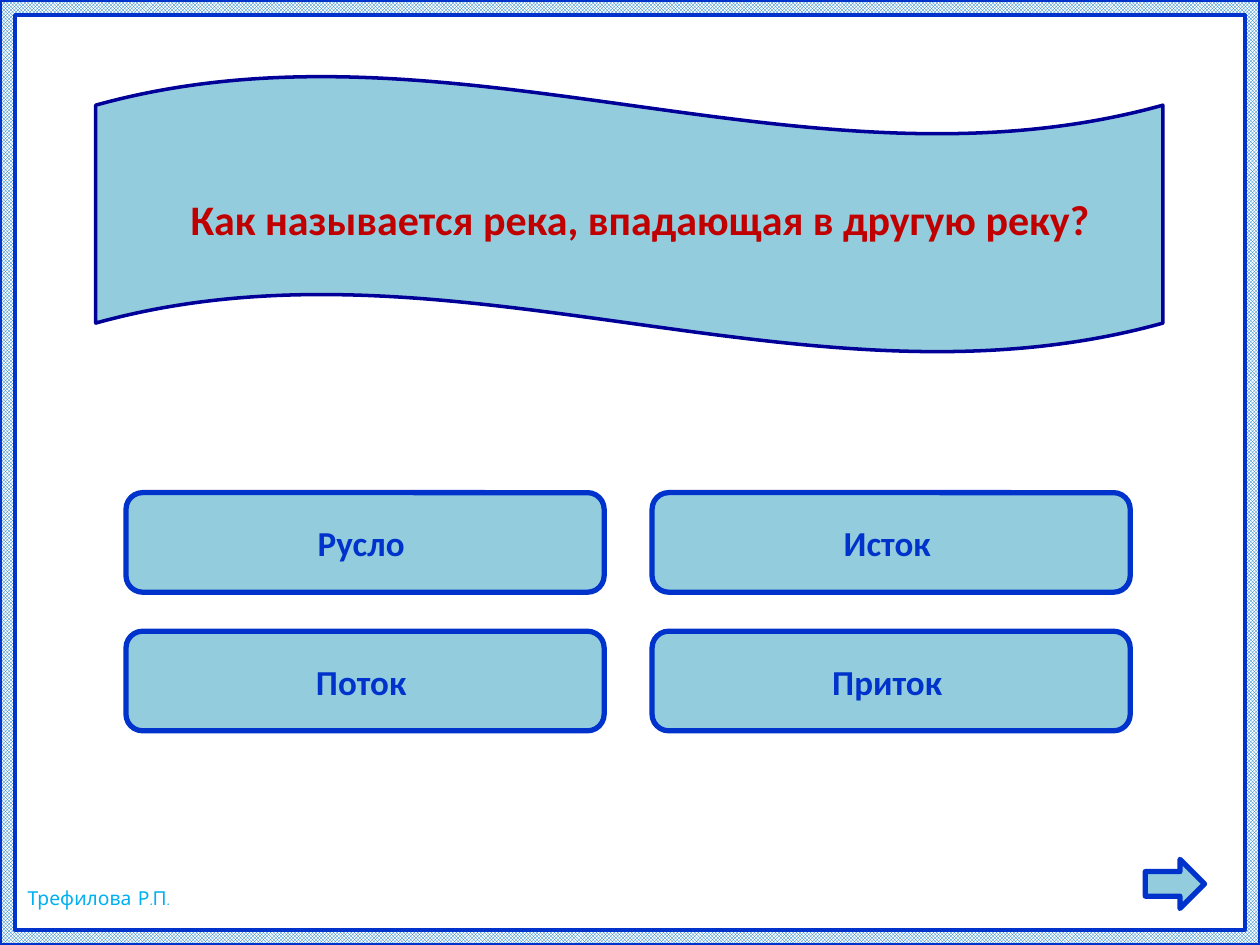
from pptx import Presentation
from pptx.dml.color import RGBColor
from pptx.enum.dml import MSO_PATTERN
from pptx.enum.shapes import MSO_SHAPE
from pptx.enum.text import MSO_ANCHOR, PP_ALIGN
from pptx.util import Inches, Pt

WHITE = RGBColor(0xFF, 0xFF, 0xFF)
CHECK_BLUE = RGBColor(0x00, 0x70, 0xC0)
BLUE = RGBColor(0x00, 0x33, 0xCC)
NAVY = RGBColor(0x00, 0x00, 0x99)
PALE_BLUE = RGBColor(0x93, 0xCD, 0xDD)
RED = RGBColor(0xC0, 0x00, 0x00)
SKY = RGBColor(0x00, 0xB0, 0xF0)

QUESTION = "Как называется река, впадающая в другую реку?"
ANSWERS = [["Русло", "Исток"], ["Поток", "Приток"]]


def add_panel(slide, kind, box, line_color, line_width):
    sp = slide.shapes.add_shape(kind, *map(Inches, box))
    sp.shadow.inherit = False
    sp.fill.solid()
    sp.fill.fore_color.rgb = PALE_BLUE
    sp.line.color.rgb = line_color
    sp.line.width = Pt(line_width)
    return sp


def set_text(sp, text, size, color, font="Calibri", bold=True, align=PP_ALIGN.CENTER):
    tf = sp.text_frame
    tf.vertical_anchor = MSO_ANCHOR.MIDDLE
    p = tf.paragraphs[0]
    p.text = text
    p.alignment = align
    p.font.name = font
    p.font.size = Pt(size)
    p.font.bold = bold
    p.font.color.rgb = color
    return tf


def add_border(slide, box):
    sp = add_panel(slide, MSO_SHAPE.FRAME, box, BLUE, 2)
    sp.adjustments[0] = 0.016
    sp.fill.patterned()
    sp.fill.pattern = MSO_PATTERN.SMALL_CHECKER_BOARD
    sp.fill.fore_color.rgb = CHECK_BLUE
    sp.fill.back_color.rgb = WHITE


def add_author(slide, box):
    sp = slide.shapes.add_textbox(*map(Inches, box))
    tf = set_text(sp, "Трефилова Р.П.", 11, SKY, "Comic Neue", False, PP_ALIGN.LEFT)
    tf.word_wrap = False


def add_question(slide, box):
    sp = add_panel(slide, MSO_SHAPE.WAVE, box, NAVY, 2)
    sp.adjustments[0] = 0.107
    sp.adjustments[1] = 0
    tf = set_text(sp, QUESTION, 24, RED)
    tf.margin_left = Inches(0.27)
    tf.margin_top = Inches(0.12)


def add_answers(slide, box, col_gap=0.38, row_gap=0.31):
    left, top, width, height = box
    w = (width - col_gap) / 2
    h = (height - row_gap) / 2
    for row, answers in enumerate(ANSWERS):
        for col, answer in enumerate(answers):
            cell = (left + col * (w + col_gap), top + row * (h + row_gap), w, h)
            sp = add_panel(slide, MSO_SHAPE.ROUNDED_RECTANGLE, cell, BLUE, 3)
            tf = set_text(sp, answer, 20, BLUE)
            tf.margin_right = Inches(0.16)


def add_next_arrow(slide, box):
    add_panel(slide, MSO_SHAPE.RIGHT_ARROW, box, BLUE, 3)


def main():
    prs = Presentation()
    prs.slide_width = Inches(10)
    prs.slide_height = Inches(7.5)
    s = prs.slides.add_slide(prs.slide_layouts[6])
    add_border(s, (0, 0, 10, 7.5))
    add_author(s, (0.12, 6.98, 1.42, 0.29))
    add_question(s, (0.76, 0.6, 8.47, 2.2))
    add_answers(s, (1, 3.91, 7.97, 1.89))
    add_next_arrow(s, (9.09, 6.82, 0.47, 0.39))
    prs.save("out.pptx")


if __name__ == "__main__":
    main()
